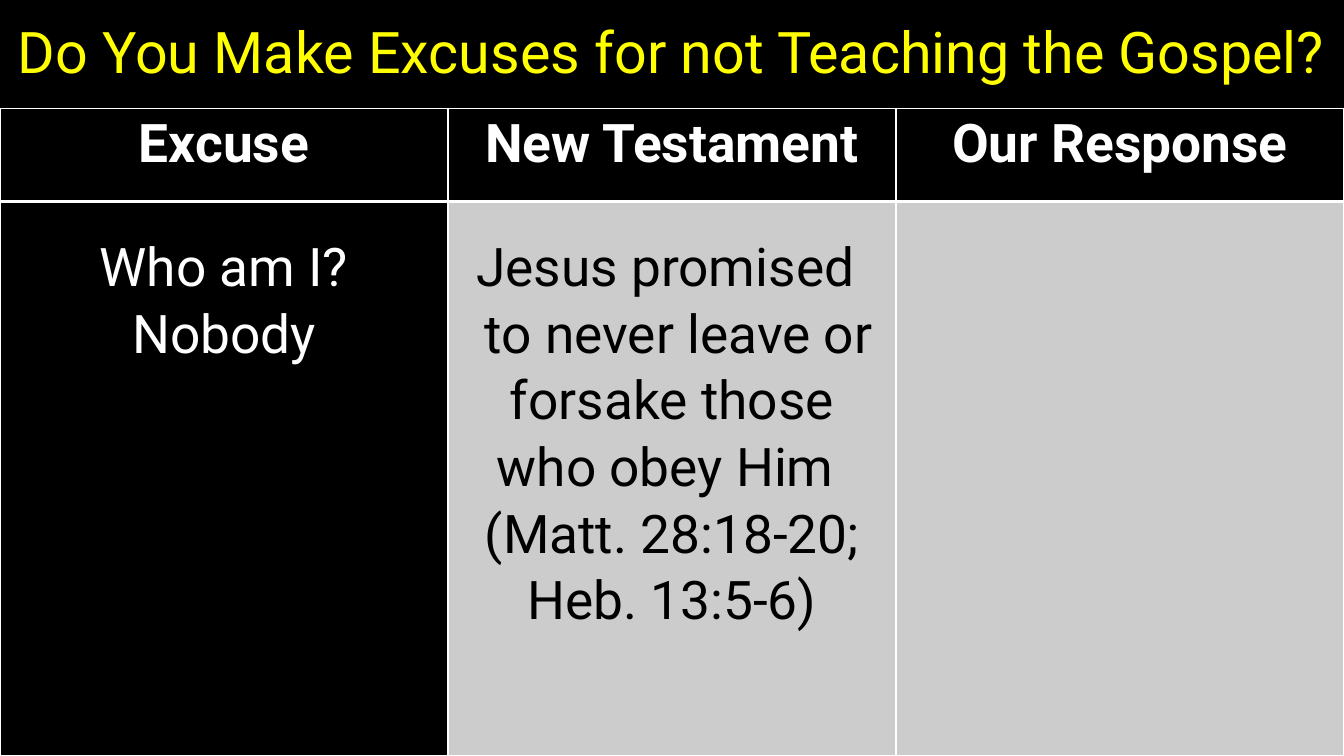
"""Build a slide with a heading and a three-column table of excuses and responses."""
from dataclasses import dataclass

from lxml import etree
from pptx import Presentation
from pptx.dml.color import RGBColor
from pptx.enum.text import MSO_ANCHOR, PP_ALIGN
from pptx.oxml.ns import qn
from pptx.slide import Slide
from pptx.table import _Cell
from pptx.text.text import TextFrame
from pptx.util import Inches, Pt

CENTER = PP_ALIGN.CENTER
MIDDLE = MSO_ANCHOR.MIDDLE
BLACK = RGBColor(0x00, 0x00, 0x00)
WHITE = RGBColor(0xFF, 0xFF, 0xFF)
YELLOW = RGBColor(0xFF, 0xFF, 0x00)
GRAY = RGBColor(0xCC, 0xCC, 0xCC)

FONT = "Roboto"
SLIDE_WIDTH = Inches(13.33)
SLIDE_HEIGHT = Inches(7.5)
TITLE_HEIGHT = Inches(1.08)
HEADER_HEIGHT = Inches(0.92)
BODY_HEIGHT = SLIDE_HEIGHT - TITLE_HEIGHT - HEADER_HEIGHT
SIDE_MARGIN = Inches(0.07)
BODY_TOP_MARGIN = Inches(0.31)
THIN, THICK = Pt(1), Pt(3)


@dataclass(frozen=True)
class TextStyle:
    """Look of a block of centred text."""
    size: float
    color: RGBColor
    line_spacing: float
    bold: bool = False


@dataclass(frozen=True)
class Column:
    """One table column: heading, body lines and body colours."""
    heading: str
    body: str
    body_fill: RGBColor
    body_color: RGBColor


TITLE = "Do You Make Excuses for not Teaching the Gospel?"
TITLE_STYLE = TextStyle(41, YELLOW, 0.9)
HEADING_STYLE = TextStyle(38, WHITE, 1.07, bold=True)
COLUMNS = [
    Column("Excuse", "Who am I? Nobody", BLACK, WHITE),
    Column(
        "New Testament",
        "Jesus promised \n to never leave or\nforsake those who obey Him \n"
        "(Matt. 28:18-20; Heb. 13:5-6)",
        GRAY, BLACK,
    ),
    Column("Our Response", "", GRAY, BLACK),
]


def write_text(frame: TextFrame, text: str, style: TextStyle) -> None:
    """Fill a frame with centred text in the given style."""
    frame.text = text
    for paragraph in frame.paragraphs:
        paragraph.alignment = CENTER
        paragraph.line_spacing = style.line_spacing
        for run in paragraph.runs:
            run.font.name = FONT
            run.font.size = Pt(style.size)
            run.font.bold = style.bold
            run.font.color.rgb = style.color


def add_borders(cell: _Cell, top: int, bottom: int) -> None:
    """Draw white borders with the given top and bottom widths."""
    properties = cell._tc.get_or_add_tcPr()
    for side, width in (("L", THIN), ("R", THIN), ("T", top), ("B", bottom)):
        line = etree.SubElement(properties, qn(f"a:ln{side}"), w=str(width))
        fill = etree.SubElement(line, qn("a:solidFill"))
        etree.SubElement(fill, qn("a:srgbClr"), val=str(WHITE))


def fill_cell(cell: _Cell, text: str, style: TextStyle, fill: RGBColor,
              top_margin: int, top: int, bottom: int) -> None:
    """Set the margins, borders, background and text of a cell."""
    cell.margin_left = cell.margin_right = SIDE_MARGIN
    cell.margin_top, cell.margin_bottom = top_margin, 0
    add_borders(cell, top, bottom)
    cell.fill.solid()
    cell.fill.fore_color.rgb = fill
    write_text(cell.text_frame, text, style)


def add_title(slide: Slide) -> None:
    """Add the heading across the top of the slide."""
    frame = slide.shapes.add_textbox(0, 0, SLIDE_WIDTH, TITLE_HEIGHT).text_frame
    frame.word_wrap = True
    frame.vertical_anchor = MIDDLE
    write_text(frame, TITLE, TITLE_STYLE)


def add_excuse_table(slide: Slide) -> None:
    """Add the table below the heading."""
    table = slide.shapes.add_table(
        2, len(COLUMNS), 0, TITLE_HEIGHT, SLIDE_WIDTH, HEADER_HEIGHT + BODY_HEIGHT
    ).table
    table.horz_banding = False
    table.first_row = False
    table.rows[0].height = HEADER_HEIGHT
    table.rows[1].height = BODY_HEIGHT
    for index, column in enumerate(COLUMNS):
        table.columns[index].width = SLIDE_WIDTH // len(COLUMNS)
        fill_cell(table.cell(0, index), column.heading, HEADING_STYLE, BLACK,
                  0, THIN, THICK)
        fill_cell(table.cell(1, index), column.body,
                  TextStyle(38, column.body_color, 1.07), column.body_fill,
                  BODY_TOP_MARGIN, THICK, THIN)


def main() -> None:
    """Create and save the presentation."""
    presentation = Presentation()
    presentation.slide_width = SLIDE_WIDTH
    presentation.slide_height = SLIDE_HEIGHT
    slide = presentation.slides.add_slide(presentation.slide_layouts[6])
    slide.background.fill.solid()
    slide.background.fill.fore_color.rgb = BLACK
    add_title(slide)
    add_excuse_table(slide)
    presentation.save("out.pptx")


if __name__ == "__main__":
    main()
